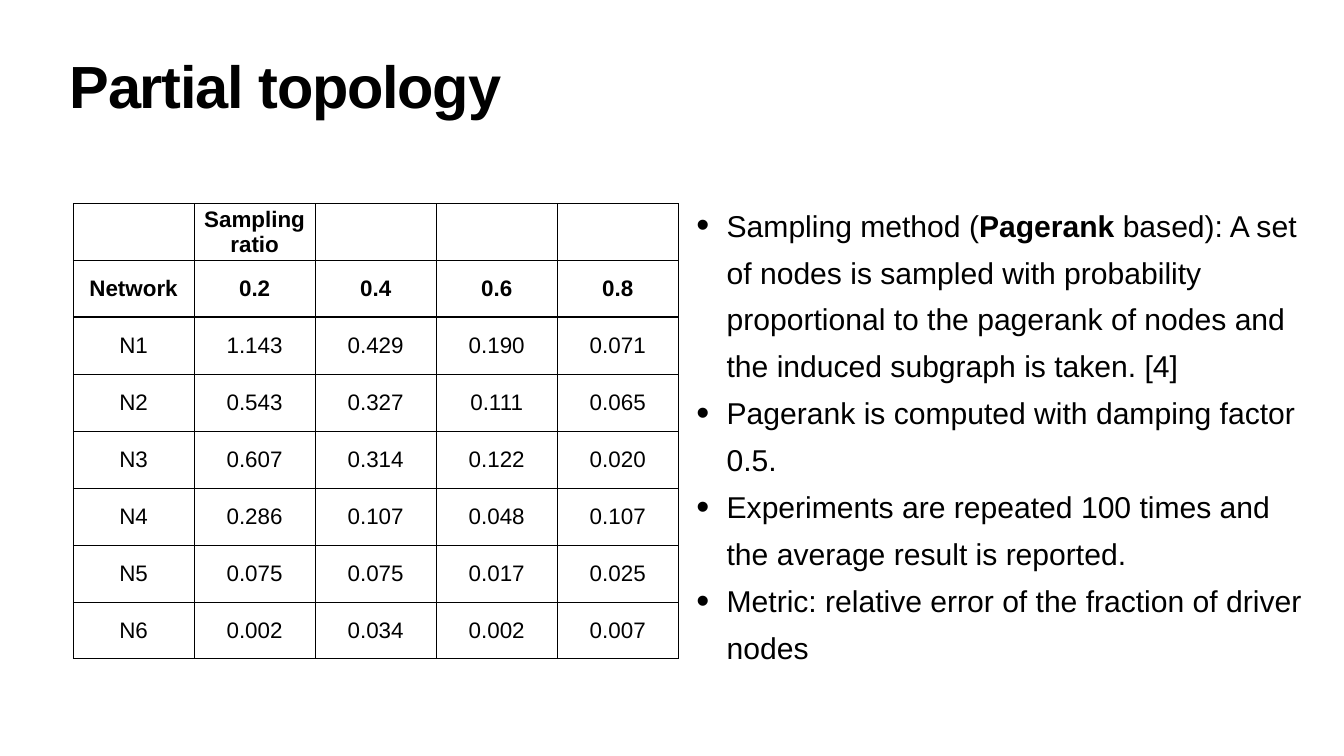
from dataclasses import dataclass
from typing import NamedTuple

from lxml.etree import SubElement
from pptx import Presentation
from pptx.dml.color import RGBColor
from pptx.enum.text import MSO_ANCHOR as Anchor, MSO_AUTO_SIZE as AutoSize, PP_ALIGN as Align
from pptx.oxml.ns import qn
from pptx.util import Inches, Pt


@dataclass(frozen=True)
class Theme:
    font: str = "Arial"
    ink: str = "000000"
    title: float = 85
    body: float = 43
    cell: float = 32
    thin: float = 1
    thick: float = 3
    inset: float = 0.06


class Box(NamedTuple):
    left: float
    top: float
    width: float
    height: float

    def emu(self) -> list:
        return [Inches(v) for v in self]


class Run(NamedTuple):
    text: str
    bold: bool = False


THEME = Theme()
TITLE_BOX = Box(1.32, 1.18, 24.03, 1.57)
TABLE_BOX = Box(1.45, 4.04, 12.01, 9.03)
BULLET_BOX = Box(13.76, 4.02, 12.15, 9.06)

HEADER_ROWS = 2
ROWS = [
    ["", "Sampling ratio", "", "", ""],
    ["Network", "0.2", "0.4", "0.6", "0.8"],
    ["N1", "1.143", "0.429", "0.190", "0.071"],
    ["N2", "0.543", "0.327", "0.111", "0.065"],
    ["N3", "0.607", "0.314", "0.122", "0.020"],
    ["N4", "0.286", "0.107", "0.048", "0.107"],
    ["N5", "0.075", "0.075", "0.017", "0.025"],
    ["N6", "0.002", "0.034", "0.002", "0.007"],
]

BULLETS = [
    [Run("Sampling method ("), Run("Pagerank ", True),
     Run("based): A set of nodes is sampled with probability proportional to "
         "the pagerank of nodes and the induced subgraph is taken. [4]")],
    [Run("Pagerank is computed with damping factor 0.5.")],
    [Run("Experiments are repeated 100 times and the average result is reported.")],
    [Run("Metric: relative error of the fraction of driver nodes")],
]


def set_all(obj, values: dict) -> None:
    for name, value in values.items():
        setattr(obj, name, value)


def margins(prefix: str = "margin_") -> dict:
    return {prefix + side: Inches(THEME.inset) for side in ("left", "top", "right", "bottom")}


def add_run(p, text: str, size: float, bold: bool = False):
    r = p.add_run()
    r.text = text
    set_all(r.font, {"name": THEME.font, "size": Pt(size), "bold": bold})
    r.font.color.rgb = RGBColor.from_string(THEME.ink)
    return r


def add_title(slide, text: str) -> None:
    sp = slide.shapes.title
    set_all(sp, dict(zip(("left", "top", "width", "height"), TITLE_BOX.emu())))
    tf = sp.text_frame
    set_all(tf, margins() | {"word_wrap": True, "vertical_anchor": Anchor.TOP,
                             "auto_size": AutoSize.NONE})
    p = tf.paragraphs[0]
    set_all(p, {"alignment": Align.LEFT, "line_spacing": 0.8})
    r = add_run(p, text, THEME.title, True)
    r.font._element.set("spc", "-170")


def set_borders(cell, widths: dict) -> None:
    """Draw the cell's edges; they precede the fill in tcPr."""
    tc_pr = cell._tc.get_or_add_tcPr()
    for i, (side, width) in enumerate(widths.items()):
        ln = SubElement(tc_pr, qn(f"a:ln{side}"), w=str(Pt(width)))
        fill = SubElement(ln, qn("a:solidFill"))
        SubElement(fill, qn("a:srgbClr"), val=THEME.ink)
        tc_pr.insert(i, ln)


def add_table(slide, rows: list) -> None:
    n_rows, n_cols = len(rows), len(rows[0])
    table = slide.shapes.add_table(n_rows, n_cols, *TABLE_BOX.emu()).table
    set_all(table, {"first_row": False, "horz_banding": False})
    for i, texts in enumerate(rows):
        for j, text in enumerate(texts):
            cell = table.cell(i, j)
            set_all(cell, margins() | {"vertical_anchor": Anchor.MIDDLE})
            cell.fill.background()
            # A heavy rule parts the header from the data
            set_borders(cell, {
                "L": THEME.thin, "R": THEME.thin,
                "T": THEME.thick if i == HEADER_ROWS else THEME.thin,
                "B": THEME.thick if i == HEADER_ROWS - 1 else THEME.thin,
            })
            if text:
                p = cell.text_frame.paragraphs[0]
                p.alignment = Align.CENTER
                add_run(p, text, THEME.cell, i < HEADER_ROWS)


def add_bullets(slide, bullets: list) -> None:
    tf = slide.shapes.add_textbox(*BULLET_BOX.emu()).text_frame
    set_all(tf, margins() | {"word_wrap": True, "vertical_anchor": Anchor.MIDDLE,
                             "auto_size": AutoSize.SHAPE_TO_FIT_TEXT})
    for i, runs in enumerate(bullets):
        p = tf.add_paragraph() if i else tf.paragraphs[0]
        set_all(p, {"alignment": Align.LEFT, "line_spacing": 1.3})
        p_pr = p._p.get_or_add_pPr()
        set_indent = {"marL": Inches(0.6), "indent": -Inches(0.6)}
        for name, value in set_indent.items():
            p_pr.set(name, str(value))
        SubElement(p_pr, qn("a:buSzPct"), val="123000")
        SubElement(p_pr, qn("a:buFont"), typeface=THEME.font)
        SubElement(p_pr, qn("a:buChar"), char="•")
        for run in runs:
            add_run(p, run.text, THEME.body, run.bold)


def main() -> None:
    prs = Presentation()
    set_all(prs, {"slide_width": Inches(26.67), "slide_height": Inches(15)})
    slide = prs.slides.add_slide(prs.slide_layouts.get_by_name("Title Only"))
    add_title(slide, "Partial topology")
    add_table(slide, ROWS)
    add_bullets(slide, BULLETS)
    prs.save("out.pptx")


if __name__ == "__main__":
    main()
